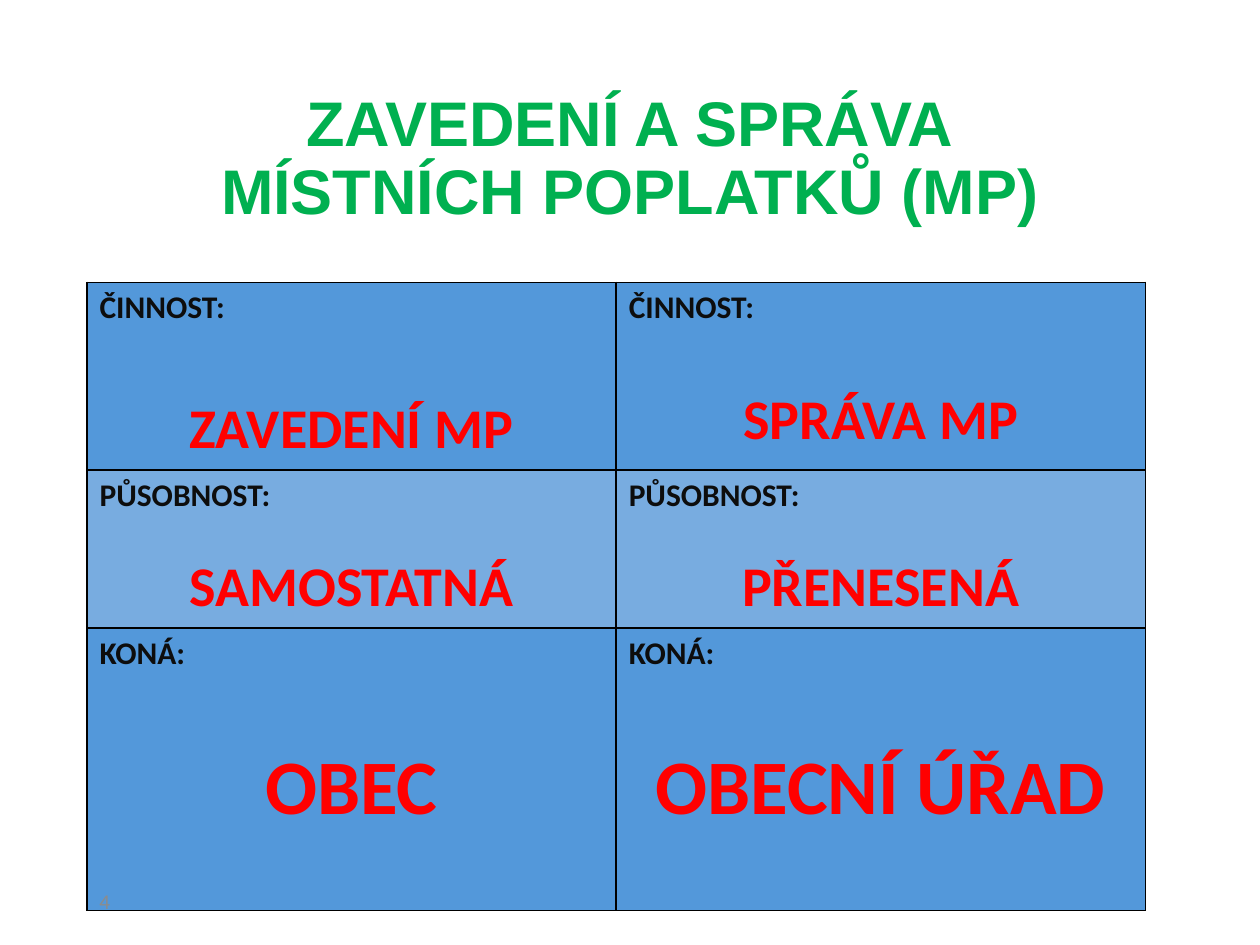
from lxml import etree
from pptx import Presentation, util as u
from pptx.dml.color import RGBColor
from pptx.enum import text
from pptx.oxml.ns import qn

THEME = {
    "title": {"name": "Arial", "size": u.Pt(36), "bold": True, "color": "00B050"},
    "label": {"name": "Calibri", "size": u.Pt(18), "bold": True, "color": "0D0D0D"},
    "answer": {"name": "Calibri", "size": u.Pt(32), "bold": True, "color": "FF0000"},
    "office": {"name": "Calibri", "size": u.Pt(44), "bold": True, "color": "FF0000"},
    "number": {"name": "Calibri", "size": u.Pt(12), "bold": False, "color": "8C8C8C"},
    "bands": ["5398DA", "78ACE0"],
    "border": "000000",
}
LINE = 1.22  # line height as a share of the type size


def style(run, role):
    for key, value in THEME[role].items():
        if key == "color":
            run.font.color.rgb = RGBColor.from_string(value)
        else:
            setattr(run.font, key, value)


def outline(cell):
    """Draw a 1 pt border on all four sides; call before setting the fill."""
    props = cell._tc.get_or_add_tcPr()
    for side in ("a:lnL", "a:lnR", "a:lnT", "a:lnB"):
        edge = etree.SubElement(props, qn(side), w=str(u.Pt(1)))
        solid = etree.SubElement(edge, qn("a:solidFill"))
        etree.SubElement(solid, qn("a:srgbClr"), val=THEME["border"])


prs = Presentation()
prs.slide_width, prs.slide_height = u.Inches(10), u.Inches(7.5)
slide = prs.slides.add_slide(prs.slide_layouts[5])
left = u.Inches(0.69)

# Title
title = slide.shapes.title
title.left, title.top = u.Inches(0.5), u.Inches(0.14)
title.width, title.height = u.Inches(9), u.Inches(1.74)
frame = title.text_frame
frame.margin_top = u.Inches(0.57)
frame.vertical_anchor = text.MSO_ANCHOR.MIDDLE
heading = frame.paragraphs[0]
heading.alignment = text.PP_ALIGN.CENTER
heading.line_spacing = 0.9
for index, line in enumerate(["ZAVEDENÍ A SPRÁVA", "MÍSTNÍCH POPLATKŮ (MP)"]):
    if index:
        heading.add_line_break()
    run = heading.add_run()
    run.text = line
    style(run, "title")

# Powers: label, row height, answer role, (answer, size of the gap above it)
powers = [
    ("ČINNOST:", 1.49, "answer", [("ZAVEDENÍ MP", 32), ("SPRÁVA MP", 28)]),
    ("PŮSOBNOST:", 1.25, "answer", [("SAMOSTATNÁ", 18), ("PŘENESENÁ", 18)]),
    ("KONÁ:", 2.24, "office", [("OBEC", 32), ("OBECNÍ ÚŘAD", 32)]),
]
total = u.Inches(sum(height for _, height, _, _ in powers))
table = slide.shapes.add_table(len(powers), 2, left, u.Inches(2.24), u.Inches(8.4), total).table
for row, (label, height, role, answers) in enumerate(powers):
    table.rows[row].height = u.Inches(height)
    for col, (answer, gap) in enumerate(answers):
        cell = table.cell(row, col)
        outline(cell)
        cell.fill.solid()
        cell.fill.fore_color.rgb = RGBColor.from_string(THEME["bands"][row % 2])
        first = cell.text_frame.paragraphs[0]
        second = cell.text_frame.add_paragraph()
        second.alignment = text.PP_ALIGN.CENTER
        second.space_before = u.Pt(round(gap * LINE))
        for paragraph, words, kind in ((first, label, "label"), (second, answer, role)):
            run = paragraph.add_run()
            run.text = words
            style(run, kind)

# Slide number
number = slide.shapes.add_textbox(left, u.Inches(6.95), u.Inches(2.25), u.Inches(0.4)).text_frame
number.word_wrap = True
number.vertical_anchor = text.MSO_ANCHOR.MIDDLE
run = number.paragraphs[0].add_run()
run.text = "4"
style(run, "number")

prs.save("out.pptx")
